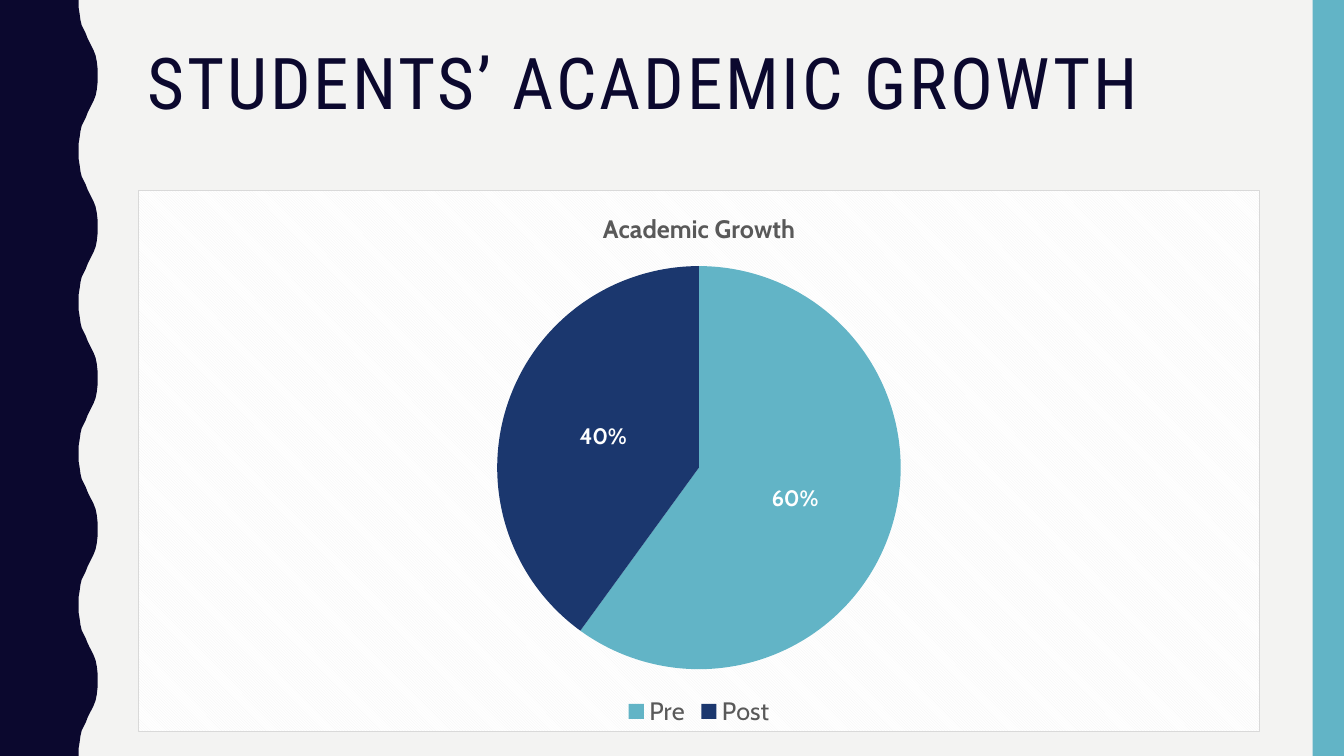
from lxml.etree import fromstring
from pptx import Presentation
from pptx.chart.data import CategoryChartData
from pptx.dml.color import RGBColor
from pptx.enum.chart import XL_CHART_TYPE, XL_LABEL_POSITION, XL_LEGEND_POSITION
from pptx.enum.shapes import MSO_SHAPE
from pptx.enum.text import MSO_ANCHOR
from pptx.util import Cm, Pt

NAVY = RGBColor(0x0B, 0x08, 0x2E)
BLUE = RGBColor(0x1B, 0x37, 0x6E)
TEAL = RGBColor(0x62, 0xB4, 0xC6)
GREY = RGBColor(0x59, 0x59, 0x59)
PAPER = RGBColor(0xF3, 0xF3, 0xF2)
WHITE = RGBColor(0xFF, 0xFF, 0xFF)

TITLE = "STUDENTS’ ACADEMIC GROWTH"
CHART_TITLE = "Academic Growth"
GROWTH = [("Pre", 60, TEAL), ("Post", 40, BLUE)]
HEAD_FONT, BODY_FONT = "Roboto Condensed", "Cabin"

WIDTH, HEIGHT = 33.87, 19.05
BAND = 0.79
LEFT, CONTENT_WIDTH = 3.48, 28.27
WAVES = 5
HALF_WAVE = [(1.98, 0), (1.98, 0.18), (2.01, 0.36), (2.03, 0.51), (2.06, 0.64),
             (2.11, 0.74), (2.16, 0.84), (2.21, 0.97), (2.26, 1.07), (2.31, 1.17),
             (2.36, 1.27), (2.41, 1.4), (2.44, 1.55), (2.46, 1.73), (2.46, 1.91)]
PLOT = {"x": 0.32, "y": 0.14, "w": 0.36, "h": 0.745}

CHART_NS = "http://schemas.openxmlformats.org/drawingml/2006/chart"
NS = f'xmlns:c="{CHART_NS}" xmlns:a="http://schemas.openxmlformats.org/drawingml/2006/main"'
CHART_FRAME = f"""<c:spPr {NS}><a:pattFill prst="dkDnDiag">
<a:fgClr><a:srgbClr val="F2F2F2"/></a:fgClr><a:bgClr><a:srgbClr val="FFFFFF"/></a:bgClr></a:pattFill>
<a:ln w="9525"><a:solidFill><a:srgbClr val="D9D9D9"/></a:solidFill></a:ln></c:spPr>"""


def format_font(font, size, color, name=BODY_FONT, bold=False):
    font.size, font.name, font.bold = Pt(size), name, bold
    font.color.rgb = color


def add_text(tf, text, size, color, name=BODY_FONT, bold=False, spacing=0, line=1.0):
    p = tf.paragraphs[0]
    p.line_spacing = line
    r = p.add_run()
    r.text = text
    format_font(r.font, size, color, name, bold)
    if spacing:
        r.font._element.set("spc", str(spacing * 100))


def paint(sp, color):
    sp.shadow.inherit = False
    sp.fill.solid()
    sp.fill.fore_color.rgb = color
    sp.line.fill.background()


def add_wave(s):
    period = HEIGHT / WAVES
    wave = HALF_WAVE + [(x, period - y) for x, y in HALF_WAVE[-2::-1]]
    edge = [(x, y + i * period) for i in range(WAVES) for x, y in wave]
    points = [(Cm(x), Cm(y)) for x, y in edge + [(0, HEIGHT)]]
    builder = s.shapes.build_freeform(0, 0)
    builder.add_line_segments(points, close=True)
    paint(builder.convert_to_shape(), NAVY)


def add_pie(s):
    data = CategoryChartData()
    data.categories = [name for name, _, _ in GROWTH]
    data.add_series("Series 1", [value for _, value, _ in GROWTH])
    chart = s.shapes.add_chart(XL_CHART_TYPE.PIE, Cm(LEFT), Cm(4.78),
                               Cm(CONTENT_WIDTH), Cm(13.67), data).chart
    format_font(chart.font, 10, GREY)
    add_text(chart.chart_title.text_frame, CHART_TITLE, 18, GREY, bold=True)
    chart.chart_title.include_in_layout = False
    chart.has_legend = True
    chart.legend.position = XL_LEGEND_POSITION.BOTTOM
    chart.legend.include_in_layout = False
    format_font(chart.legend.font, 18, GREY)

    plot = chart.plots[0]
    plot.vary_by_categories = True
    for i, (_, _, color) in enumerate(GROWTH):
        fill = plot.series[0].points[i].format.fill
        fill.solid()
        fill.fore_color.rgb = color
    labels = plot.series[0].data_labels
    labels.show_percentage, labels.show_value = True, False
    labels.number_format, labels.number_format_is_linked = "0%", False
    labels.position = XL_LABEL_POSITION.CENTER
    format_font(labels.font, 16, WHITE, bold=True)

    chart_el = chart._chartSpace.find(f"{{{CHART_NS}}}chart")
    chart_el.addnext(fromstring(CHART_FRAME))
    area = chart_el.find(f"{{{CHART_NS}}}plotArea")
    for old in area.findall(f"{{{CHART_NS}}}layout"):
        area.remove(old)
    sizes = "".join(f'<c:{k} val="{v}"/>' for k, v in PLOT.items())
    area.insert(0, fromstring(
        f'<c:layout {NS}><c:manualLayout><c:layoutTarget val="inner"/>'
        f'<c:xMode val="edge"/><c:yMode val="edge"/>{sizes}</c:manualLayout></c:layout>'))


def main():
    prs = Presentation()
    prs.slide_width, prs.slide_height = Cm(WIDTH), Cm(HEIGHT)
    s = prs.slides.add_slide(prs.slide_layouts[6])
    s.background.fill.solid()
    s.background.fill.fore_color.rgb = PAPER
    add_wave(s)
    paint(s.shapes.add_shape(MSO_SHAPE.RECTANGLE, Cm(WIDTH - BAND), 0, Cm(BAND), Cm(HEIGHT)), TEAL)
    tf = s.shapes.add_textbox(Cm(LEFT), Cm(1.07), Cm(CONTENT_WIDTH), Cm(4.14)).text_frame
    tf.word_wrap = True
    tf.vertical_anchor = MSO_ANCHOR.TOP
    add_text(tf, TITLE, 51, NAVY, name=HEAD_FONT, spacing=2, line=0.9)
    add_pie(s)
    prs.save("out.pptx")


if __name__ == "__main__":
    main()
